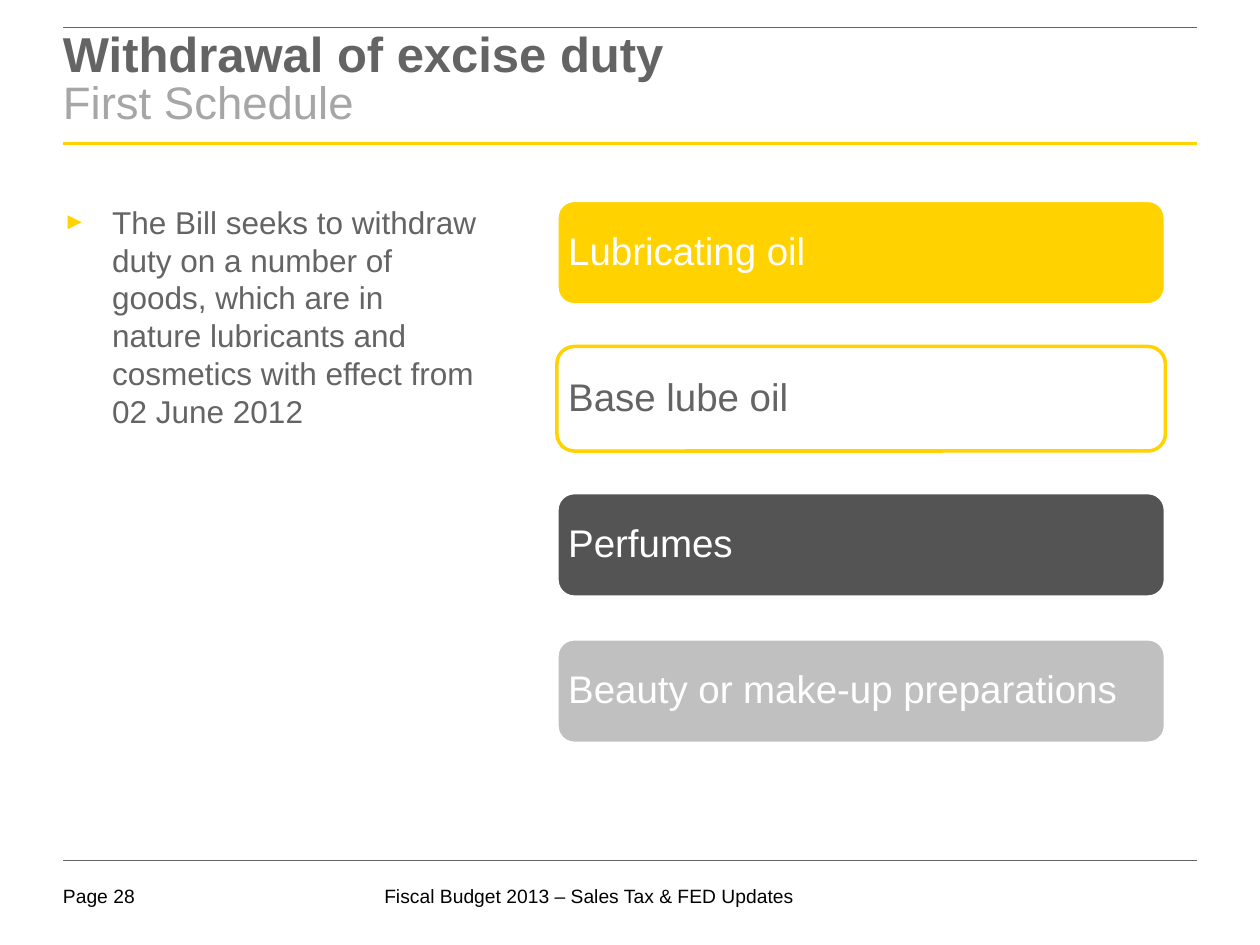
from dataclasses import dataclass

from lxml import etree
from pptx import Presentation
from pptx.dml.color import RGBColor
from pptx.enum.shapes import MSO_CONNECTOR, MSO_SHAPE
from pptx.enum.text import MSO_ANCHOR, PP_ALIGN
from pptx.oxml.ns import qn
from pptx.util import Inches, Pt

LINE = MSO_CONNECTOR.STRAIGHT
ROUND = MSO_SHAPE.ROUNDED_RECTANGLE
MIDDLE = MSO_ANCHOR.MIDDLE
LEFT = PP_ALIGN.LEFT


@dataclass(frozen=True)
class Theme:
    face: str = "Arial"
    yellow: str = "FFD200"
    gray: str = "646464"
    dark: str = "545454"
    silver: str = "C0C0C0"
    pale: str = "A6A6A6"
    white: str = "FFFFFF"
    black: str = "000000"
    title: int = 28
    sub: int = 26
    item: int = 22
    body: int = 18
    foot: int = 11


THEME = Theme()
GOODS = [
    ("Lubricating oil", THEME.yellow, THEME.white, THEME.white),
    ("Base lube oil", THEME.white, THEME.yellow, THEME.gray),
    ("Perfumes", THEME.dark, THEME.white, THEME.white),
    ("Beauty or make-up preparations", THEME.silver, THEME.white, THEME.white),
]


def style(font, size, color, bold=False):
    font.name = THEME.face
    font.size = Pt(size)
    font.bold = bold
    font.color.rgb = RGBColor.from_string(color)


def inset(frame, left=0, top=0, right=0, bottom=0):
    frame.word_wrap = True
    frame.margin_left, frame.margin_top = Inches(left), Inches(top)
    frame.margin_right, frame.margin_bottom = Inches(right), Inches(bottom)


def add_text(slide, box, text):
    frame = slide.shapes.add_textbox(*map(Inches, box)).text_frame
    inset(frame)
    frame.text = text
    return frame


def add_rule(slide, left, y, width, color, weight):
    rule = slide.shapes.add_connector(
        LINE, Inches(left), Inches(y), Inches(left + width), Inches(y))
    rule.line.color.rgb = RGBColor.from_string(color)
    rule.line.width = Pt(weight)
    etree.SubElement(rule._element.spPr, qn("a:effectLst"))


def add_bullet(para, indent):
    props = para._p.get_or_add_pPr()
    props.set("marL", str(Inches(indent)))
    props.set("indent", str(-Inches(indent)))
    color = etree.SubElement(props, qn("a:buClr"))
    etree.SubElement(color, qn("a:srgbClr"), val=THEME.yellow)
    etree.SubElement(props, qn("a:buSzPct"), val="75000")
    etree.SubElement(props, qn("a:buFont"), typeface=THEME.face)
    etree.SubElement(props, qn("a:buChar"), char="►")


def add_header(slide, box):
    left, top, width, height = box
    add_rule(slide, left, top, width, THEME.gray, 0.5)
    add_rule(slide, left, top + height, width, THEME.yellow, 1.5)
    frame = add_text(slide, box, "Withdrawal of excise duty\vFirst Schedule")
    inset(frame, top=0.04)
    para = frame.paragraphs[0]
    para.line_spacing = 0.85
    head, sub = para.runs
    style(head.font, THEME.title, THEME.gray, True)
    style(sub.font, THEME.sub, THEME.pale)


def add_body(slide, box):
    frame = add_text(
        slide, box,
        "The Bill seeks to withdraw duty on a number of goods, which are in "
        "nature lubricants and cosmetics with effect from 02 June 2012")
    para = frame.paragraphs[0]
    add_bullet(para, 0.39)
    para.line_spacing = Pt(1.2 * THEME.body)
    style(para.runs[0].font, THEME.body, THEME.gray)


def add_goods(slide, box):
    """Stack one rounded bar per item, with equal gaps, to fill the box."""
    left, top, width, height = box
    bar = 0.83
    pitch = (height - bar) / (len(GOODS) - 1)
    for row, (name, fill, edge, ink) in enumerate(GOODS):
        shape = slide.shapes.add_shape(
            ROUND, Inches(left), Inches(top + row * pitch),
            Inches(width), Inches(bar))
        shape.shadow.inherit = False
        shape.fill.solid()
        shape.fill.fore_color.rgb = RGBColor.from_string(fill)
        shape.line.color.rgb = RGBColor.from_string(edge)
        shape.line.width = Pt(2)
        frame = shape.text_frame
        inset(frame, 0.05, 0.05, 0.05, 0.05)
        frame.vertical_anchor = MIDDLE
        frame.text = name
        para = frame.paragraphs[0]
        para.alignment = LEFT
        para.line_spacing = 0.9
        style(para.runs[0].font, THEME.item, ink)


def add_footer(slide, box):
    left, top, width, height = box
    add_rule(slide, left, top, width, THEME.gray, 0.25)
    notes = [(0, 0.73, "Page 28"),
             (2.55, 3.7, "Fiscal Budget 2013 – Sales Tax & FED Updates")]
    for shift, span, text in notes:
        spot = (left + shift, top + 0.19, span, height - 0.19)
        frame = add_text(slide, spot, text)
        style(frame.paragraphs[0].runs[0].font, THEME.foot, THEME.black)


def main():
    deck = Presentation()
    deck.slide_width, deck.slide_height = Inches(10), Inches(7.5)
    slide = deck.slides.add_slide(deck.slide_layouts[6])
    add_header(slide, (0.5, 0.22, 9, 0.92))
    add_body(slide, (0.5, 1.61, 3.29, 4.77))
    add_goods(slide, (4.42, 1.59, 4.83, 4.31))
    add_footer(slide, (0.5, 6.83, 9, 0.41))
    deck.save("out.pptx")


if __name__ == "__main__":
    main()
